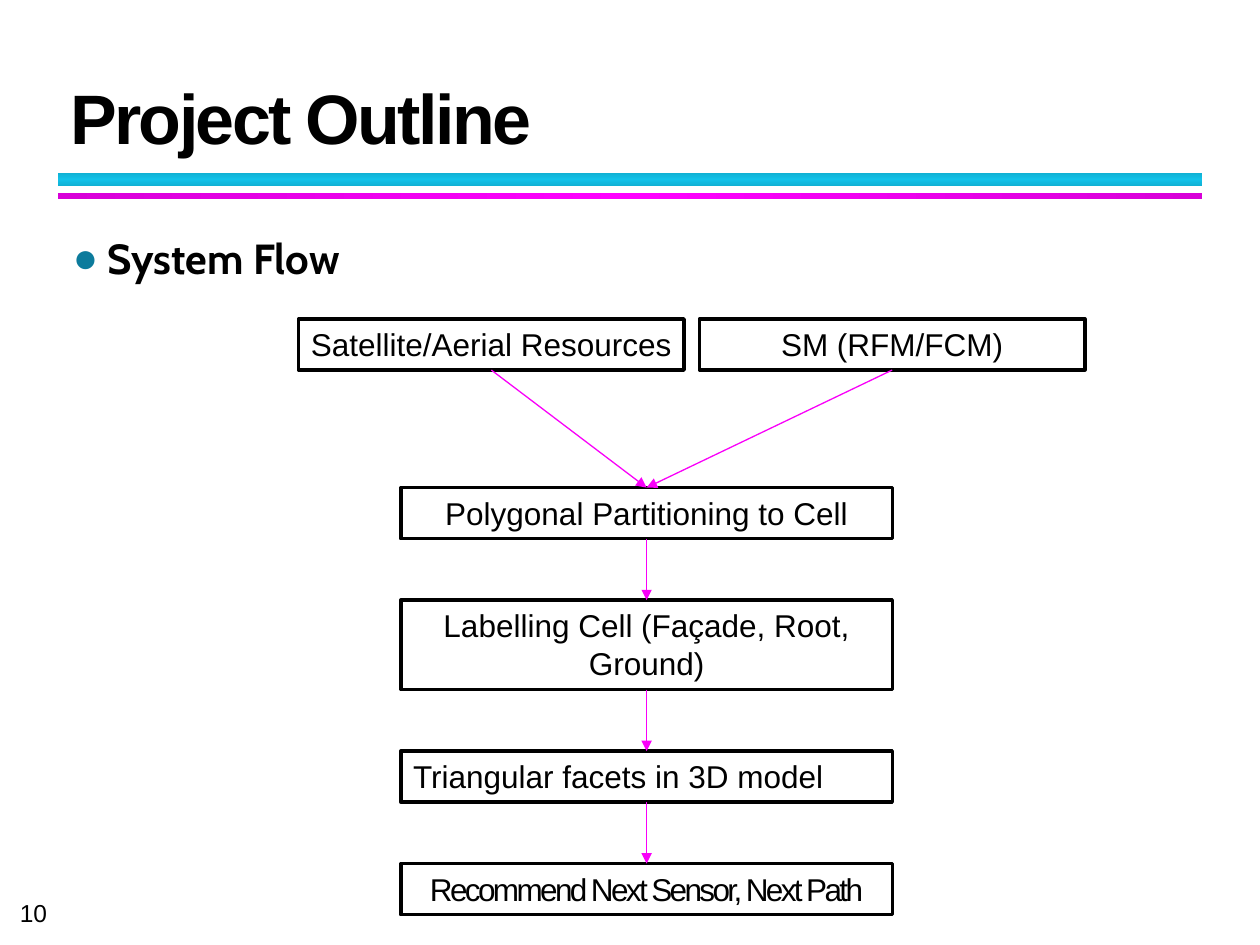
from dataclasses import dataclass

from lxml.etree import SubElement
from pptx import Presentation
from pptx.dml.color import RGBColor
from pptx.enum.shapes import MSO_CONNECTOR as Connector, MSO_SHAPE as Preset
from pptx.enum.text import MSO_ANCHOR as Anchor, MSO_AUTO_SIZE as AutoSize, PP_ALIGN as Align
from pptx.oxml import parse_xml
from pptx.oxml.ns import nsdecls, qn
from pptx.util import Cm, Pt


@dataclass(frozen=True)
class Theme:
    ink: str = "000000"
    paper: str = "FFFFFF"
    arrow: str = "F900F9"
    bullet: str = "0C7B9C"
    cyan_bar: tuple = ("10AFD2", "12C2E9")
    magenta_bar: tuple = ("D800D8", "FF00FF")
    font: str = "Arial"
    heading_font: str = "Cabin"
    title_size: int = 40
    heading_size: int = 24
    box_size: int = 18
    number_size: int = 14
    tight_spacing: int = -150


THEME = Theme()
TOP_SITE, BOTTOM_SITE = 0, 2


def rgb(value):
    return RGBColor.from_string(value)


def write_text(shape, text, size, font=THEME.font, bold=False, align=Align.LEFT, spacing=0):
    frame = shape.text_frame
    frame.text = text
    frame.word_wrap = True
    paragraph = frame.paragraphs[0]
    paragraph.alignment = align
    run = paragraph.runs[0]
    run.font.name = font
    run.font.size = Pt(size)
    run.font.bold = bold
    run.font.color.rgb = rgb(THEME.ink)
    if spacing:
        run.font._element.set("spc", str(spacing))
    return paragraph


def add_label(slide, left, top, width, height, text, size, anchor=Anchor.BOTTOM, **style):
    shape = slide.shapes.add_textbox(Cm(left), Cm(top), Cm(width), Cm(height))
    paragraph = write_text(shape, text, size, **style)
    shape.text_frame.vertical_anchor = anchor
    return shape, paragraph


def add_bullet(paragraph, indent):
    properties = paragraph._p.get_or_add_pPr()
    properties.set("marL", str(Cm(indent)))
    properties.set("indent", str(-Cm(indent)))
    color = SubElement(properties, qn("a:buClr"))
    SubElement(color, qn("a:srgbClr"), val=THEME.bullet)
    SubElement(properties, qn("a:buFont"), typeface=THEME.font)
    SubElement(properties, qn("a:buChar"), char="●")


def add_rectangle(slide, left, top, width, height):
    shape = slide.shapes.add_shape(Preset.RECTANGLE, Cm(left), Cm(top), Cm(width), Cm(height))
    shape.shadow.inherit = False
    return shape


def add_bar(slide, top, height, colors, degrees):
    edge, middle = colors
    shape = add_rectangle(slide, 1.17, top, 23.06, height)
    shape.line.fill.background()
    stops = "".join(
        f'<a:gs pos="{position}"><a:srgbClr val="{color}"/></a:gs>'
        for position, color in ((0, edge), (50000, middle), (100000, edge))
    )
    gradient = parse_xml(
        f'<a:gradFill {nsdecls("a")}><a:gsLst>{stops}</a:gsLst>'
        f'<a:lin ang="{degrees * 60000}" scaled="0"/></a:gradFill>'
    )
    shape._element.spPr.find(qn("a:prstGeom")).addnext(gradient)


def add_box(slide, left, top, width, height, text, align=Align.CENTER, spacing=0):
    shape = add_rectangle(slide, left, top, width, height)
    shape.fill.solid()
    shape.fill.fore_color.rgb = rgb(THEME.paper)
    shape.line.color.rgb = rgb(THEME.ink)
    shape.line.width = Pt(2)
    write_text(shape, text, THEME.box_size, align=align, spacing=spacing)
    shape.text_frame.vertical_anchor = Anchor.TOP
    shape.text_frame.auto_size = AutoSize.SHAPE_TO_FIT_TEXT
    return shape


def add_arrow(slide, source, target):
    connector = slide.shapes.add_connector(Connector.STRAIGHT, 0, 0, 0, 0)
    connector.begin_connect(source, BOTTOM_SITE)
    connector.end_connect(target, TOP_SITE)
    connector.line.color.rgb = rgb(THEME.arrow)
    connector.line.width = Pt(0.75)
    SubElement(connector.line._get_or_add_ln(), qn("a:tailEnd"), type="triangle")
    SubElement(connector._element.spPr, qn("a:effectLst"))


def add_header(slide):
    _, title = add_label(slide, 1.17, 0.84, 23.01, 2.51, "Project Outline", THEME.title_size,
                         bold=True, spacing=THEME.tight_spacing)
    title.line_spacing = 0.9
    add_bar(slide, 3.48, 0.28, THEME.cyan_bar, 90)
    add_bar(slide, 3.89, 0.13, THEME.magenta_bar, 0)
    _, heading = add_label(slide, 1.22, 4.06, 22.89, 12.8, "System Flow", THEME.heading_size,
                           anchor=Anchor.TOP, font=THEME.heading_font, bold=True)
    heading.line_spacing = 1.5
    add_bullet(heading, 0.69)


def add_flow(slide):
    line_height, gap = 1.03, 1.24
    inputs = [
        add_box(slide, 6.02, 6.43, 7.77, line_height, "Satellite/Aerial Resources", Align.LEFT),
        add_box(slide, 14.1, 6.43, 7.77, line_height, "SM (RFM/FCM)"),
    ]
    steps = (
        ("Polygonal Partitioning to Cell", line_height, Align.CENTER, 0),
        ("Labelling Cell (Façade, Root, Ground)", 1.8, Align.CENTER, 0),
        ("Triangular facets in 3D model", line_height, Align.LEFT, 0),
        ("Recommend Next Sensor, Next Path", line_height, Align.CENTER, THEME.tight_spacing),
    )
    top = 9.83
    sources = inputs
    for text, height, align, spacing in steps:
        box = add_box(slide, 8.08, top, 9.91, height, text, align, spacing)
        for source in sources:
            add_arrow(slide, source, box)
        sources = [box]
        top += height + gap


def add_slide_number(slide):
    shape, _ = add_label(slide, 0.4, 18.11, 0.8, 0.58, "10", THEME.number_size)
    frame = shape.text_frame
    frame.margin_left = frame.margin_right = frame.margin_top = frame.margin_bottom = 0


def main():
    presentation = Presentation()
    presentation.slide_width = Cm(25.4)
    presentation.slide_height = Cm(19.05)
    slide = presentation.slides.add_slide(presentation.slide_layouts[6])
    add_slide_number(slide)
    add_header(slide)
    add_flow(slide)
    presentation.save("out.pptx")


if __name__ == "__main__":
    main()
